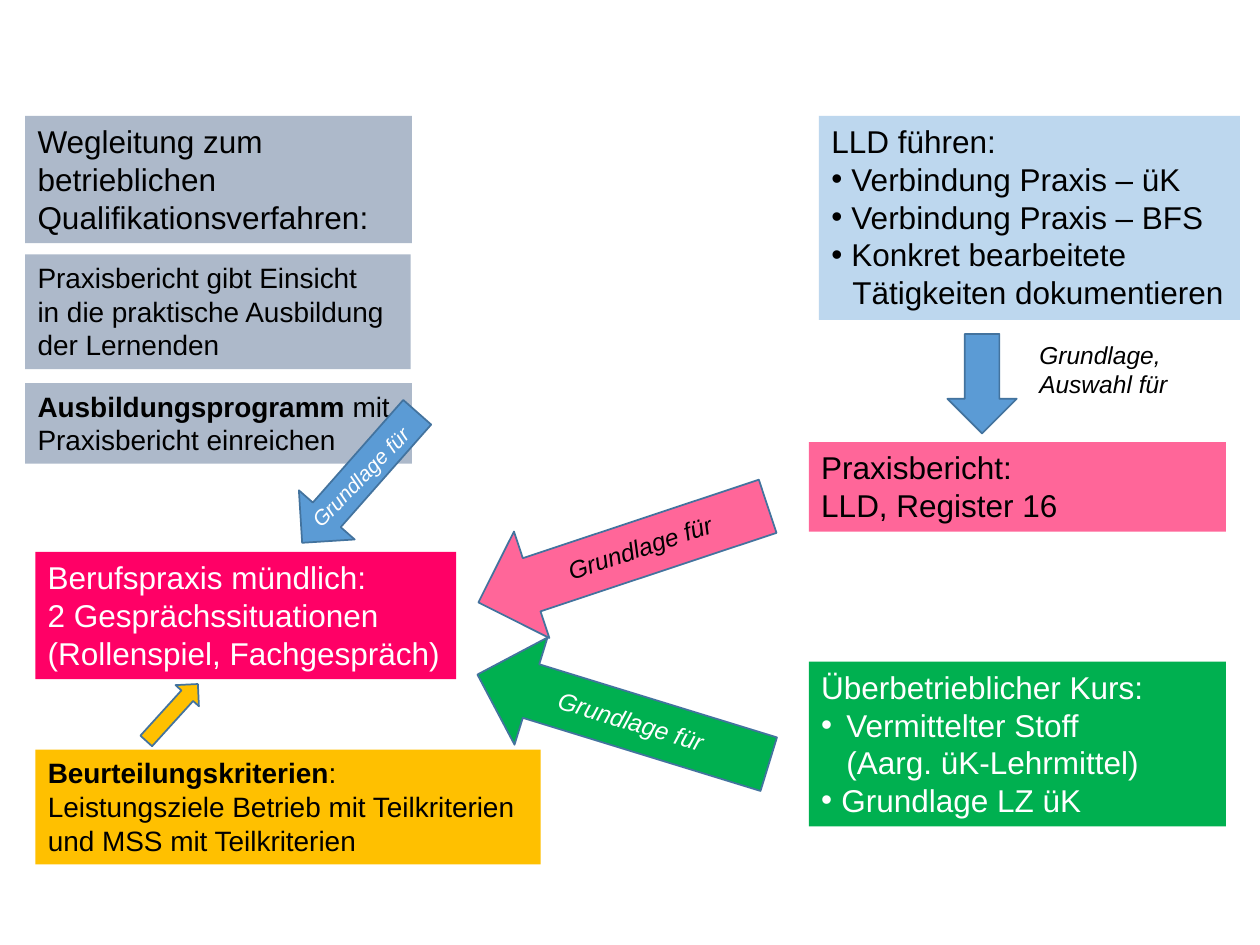
from dataclasses import dataclass
from typing import Optional

from lxml.etree import SubElement
from pptx import Presentation
from pptx.dml.color import RGBColor
from pptx.enum.shapes import MSO_SHAPE
from pptx.enum.text import MSO_ANCHOR, MSO_AUTO_SIZE, PP_ALIGN
from pptx.oxml.ns import qn
from pptx.util import Pt

BLACK = RGBColor(0, 0, 0)
WHITE = RGBColor(0xFF, 0xFF, 0xFF)
GREY = RGBColor(0xAD, 0xB9, 0xCA)
PALE_BLUE = RGBColor(0xBD, 0xD7, 0xEE)
BLUE = RGBColor(0x5B, 0x9B, 0xD5)
OUTLINE = RGBColor(0x43, 0x73, 0x9E)
ROSE = RGBColor(0xFF, 0x66, 0x99)
MAGENTA = RGBColor(0xFF, 0x00, 0x66)
GREEN = RGBColor(0x00, 0xB0, 0x50)
AMBER = RGBColor(0xFF, 0xC0, 0x00)


@dataclass
class Line:
    text: str
    bold: str = ""  # bold words in front of the text
    margin: float = 0
    bullet: bool = False


@dataclass
class Box:
    at: tuple[float, float, float, float]
    lines: list[Line]
    fill: Optional[RGBColor] = None
    size: float = 18
    color: RGBColor = BLACK
    italic: bool = False
    wrap: bool = True
    rotation: float = 0


@dataclass
class Arrow:
    at: tuple[float, float, float, float]
    fill: RGBColor
    rotation: float = 0


def plain(*texts: str) -> list[Line]:
    return [Line(text) for text in texts]


def add_run(p, text: str, *, size: float, color: RGBColor,
            bold: bool = False, italic: bool = False) -> None:
    for i, part in enumerate(text.split("\n")):
        if i:
            p.add_line_break()
        r = p.add_run()
        r.text = part
        f = r.font
        f.name, f.size, f.bold, f.italic = "Arial", Pt(size), bold, italic
        f.color.rgb = color


def set_indent(p, line: Line) -> None:
    pPr = p._p.get_or_add_pPr()
    pPr.set("marL", str(Pt(line.margin)))
    if line.bullet:
        pPr.set("indent", str(-Pt(line.margin)))
        SubElement(pPr, qn("a:buFont")).set("typeface", "Arial")
        SubElement(pPr, qn("a:buChar")).set("char", "•")


def draw_box(s, box: Box) -> None:
    sp = s.shapes.add_textbox(*map(Pt, box.at))
    sp.rotation = box.rotation
    if box.fill is not None:
        sp.fill.solid()
        sp.fill.fore_color.rgb = box.fill
    tf = sp.text_frame
    tf.word_wrap = box.wrap
    tf.auto_size = MSO_AUTO_SIZE.SHAPE_TO_FIT_TEXT
    tf.vertical_anchor = MSO_ANCHOR.TOP
    style = dict(size=box.size, color=box.color, italic=box.italic)
    for i, line in enumerate(box.lines):
        p = tf.add_paragraph() if i else tf.paragraphs[0]
        p.alignment = PP_ALIGN.LEFT
        if line.margin:
            set_indent(p, line)
        if line.bold:
            add_run(p, line.bold, bold=True, **style)
        add_run(p, line.text, **style)


def draw_arrow(s, arrow: Arrow) -> None:
    sp = s.shapes.add_shape(MSO_SHAPE.DOWN_ARROW, *map(Pt, arrow.at))
    sp.rotation = arrow.rotation
    sp.shadow.inherit = False
    sp.fill.solid()
    sp.fill.fore_color.rgb = arrow.fill
    sp.line.color.rgb = OUTLINE
    sp.line.width = Pt(1)


BOXES = [
    # Guide to the qualification procedure
    Box((14.4, 66.2, 221, 72.7),
        plain("Wegleitung zum", "betrieblichen", "Qualifikationsverfahren:"), GREY),
    Box((14.4, 145.4, 220.3, 65.5),
        plain("Praxisbericht gibt Einsicht", "in die praktische Ausbildung",
              "der Lernenden"), GREY, size=16, wrap=False),
    Box((14.4, 218.9, 221, 46.1),
        [Line(" mit", bold="Ausbildungsprogramm"), Line("Praxisbericht einreichen")],
        GREY, size=16),
    # Learning documentation, report and course
    Box((468, 66.2, 240.5, 116.6),
        [Line("LLD führen:"),
         Line("Verbindung Praxis – üK", margin=11.5, bullet=True),
         Line("Verbindung Praxis – BFS", margin=11.5, bullet=True),
         Line("Konkret bearbeitete", margin=11.5, bullet=True),
         Line("Tätigkeiten dokumentieren", margin=12)],
        PALE_BLUE, wrap=False),
    Box((462.2, 252.7, 238.3, 51.1), plain("Praxisbericht:", "LLD, Register 16"), ROSE),
    Box((462.2, 378, 238.3, 94.3),
        [Line("Überbetrieblicher Kurs:"),
         Line("Vermittelter Stoff\n(Aarg. üK-Lehrmittel)", margin=14.4, bullet=True),
         Line("Grundlage LZ üK", margin=11.5, bullet=True)],
        GREEN, color=WHITE),
    # Oral examination and its criteria
    Box((20.2, 315.4, 240.5, 72.7),
        plain("Berufspraxis mündlich:", "2 Gesprächssituationen",
              "(Rollenspiel, Fachgespräch)"), MAGENTA, color=WHITE, wrap=False),
    Box((20.2, 428.4, 288.7, 65.5),
        [Line(":", bold="Beurteilungskriterien"),
         Line("Leistungsziele Betrieb mit Teilkriterien"),
         Line("und MSS mit Teilkriterien")], AMBER, size=16, wrap=False),
]

ARROWS = [
    Arrow((541.4, 190.8, 39.6, 56.9), BLUE),
    Arrow((324, 229.7, 64.1, 174.2), ROSE, 71.6),
    Arrow((324, 324, 64.1, 174.2), GREEN, 107.1),
    Arrow((89.3, 385.2, 18, 43.9), AMBER, 222.2),
    Arrow((184.3, 223.2, 42.5, 99.4), BLUE, 41.4),
]

BASIS = plain("Grundlage für")
LABELS = [
    Box((586.8, 190.8, 88.6, 41), plain("Grundlage,", "Auswahl für"),
        size=14, italic=True, wrap=False),
    Box((315.4, 298.8, 113, 24.5), BASIS, size=14, italic=True, rotation=341.4),
    Box((310.3, 401.8, 113, 24.5), BASIS, size=14, color=WHITE, italic=True,
        rotation=16.9),
    Box((161.3, 259.9, 92.9, 21.6), BASIS, size=12, color=WHITE, italic=True,
        rotation=314.4),
]


def main() -> None:
    prs = Presentation()
    prs.slide_width, prs.slide_height = Pt(720), Pt(540)
    s = prs.slides.add_slide(prs.slide_layouts[6])
    for box in BOXES:
        draw_box(s, box)
    for arrow in ARROWS:
        draw_arrow(s, arrow)
    for label in LABELS:
        draw_box(s, label)
    prs.save("out.pptx")


if __name__ == "__main__":
    main()
